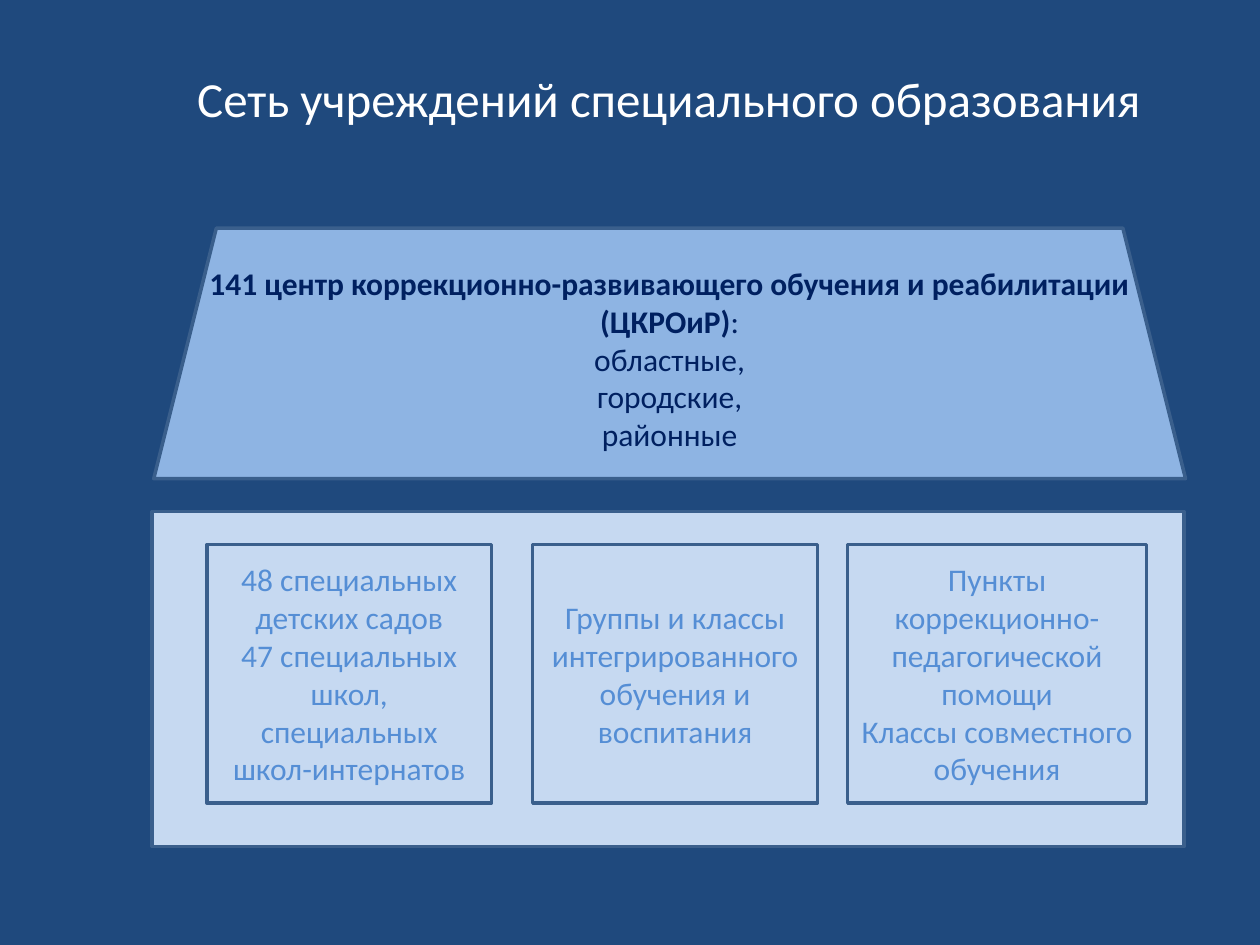
from pptx import Presentation
from pptx.dml.color import RGBColor as RGB
from pptx.enum.shapes import MSO_SHAPE as Shape
from pptx.enum.text import MSO_ANCHOR as Anchor, PP_ALIGN as Align
from pptx.util import Cm, Pt

BACK = RGB(0x1F, 0x49, 0x7D)
WHITE = RGB(0xFF, 0xFF, 0xFF)
ROOF = RGB(0x8E, 0xB4, 0xE3)
PALE = RGB(0xC6, 0xD9, 0xF1)
EDGE = RGB(0x3A, 0x5F, 0x8C)
NAVY = RGB(0x00, 0x20, 0x60)
BLUE = RGB(0x55, 0x8E, 0xD5)

CENTRE = "141 центр коррекционно-развивающего обучения и реабилитации (ЦКРОиР)"
LEVELS = ["областные,", "городские,", "районные"]
UNITS = [
    (1.1, 5.74, ["48 специальных детских садов",
                 "47 специальных школ, специальных школ-интернатов"]),
    (7.67, 5.74, ["Группы и классы интегрированного обучения и воспитания"]),
    (14.02, 6.02, ["Пункты коррекционно-педагогической помощи",
                   "Классы совместного обучения"]),
]


def style(frame, size, color):
    frame.word_wrap = True
    frame.vertical_anchor = Anchor.MIDDLE
    for para in frame.paragraphs:
        para.alignment = Align.CENTER
        for run in para.runs:
            run.font.name = "Calibri"
            run.font.size = Pt(size)
            run.font.color.rgb = color


def add_block(slide, kind, box, fill):
    block = slide.shapes.add_shape(kind, *map(Cm, box))
    block.shadow.inherit = False
    block.fill.solid()
    block.fill.fore_color.rgb = fill
    block.line.color.rgb = EDGE
    block.line.width = Pt(2)
    return block


def add_title(slide, box):
    title = slide.shapes.title
    title.left, title.top, title.width, title.height = map(Cm, box)
    title.text_frame.text = "Сеть учреждений специального образования"
    style(title.text_frame, 28, WHITE)


def add_roof(slide, box):
    frame = add_block(slide, Shape.TRAPEZOID, box, ROOF).text_frame
    frame.text = "\n".join([CENTRE] + LEVELS)
    head = frame.paragraphs[0]
    head.runs[0].font.bold = True
    head.add_run().text = ":"
    style(frame, 18, NAVY)


def add_base(slide, box):
    left, top, width, height = box
    add_block(slide, Shape.RECTANGLE, box, PALE)
    for shift, wide, lines in UNITS:
        cell = (left + shift, top + 0.67, wide, 5.21)
        frame = add_block(slide, Shape.RECTANGLE, cell, PALE).text_frame
        frame.text = "\n".join(lines)
        style(frame, 18, BLUE)


def main():
    deck = Presentation()
    deck.slide_width, deck.slide_height = Cm(25.4), Cm(19.05)
    slide = deck.slides.add_slide(deck.slide_layouts[5])
    slide.background.fill.solid()
    slide.background.fill.fore_color.rgb = BACK
    add_title(slide, (3.68, 0.38, 19.6, 3.18))
    add_roof(slide, (3.1, 4.6, 20.8, 5.05))
    add_base(slide, (3.07, 10.31, 20.8, 6.76))
    deck.save("out.pptx")


if __name__ == "__main__":
    main()
